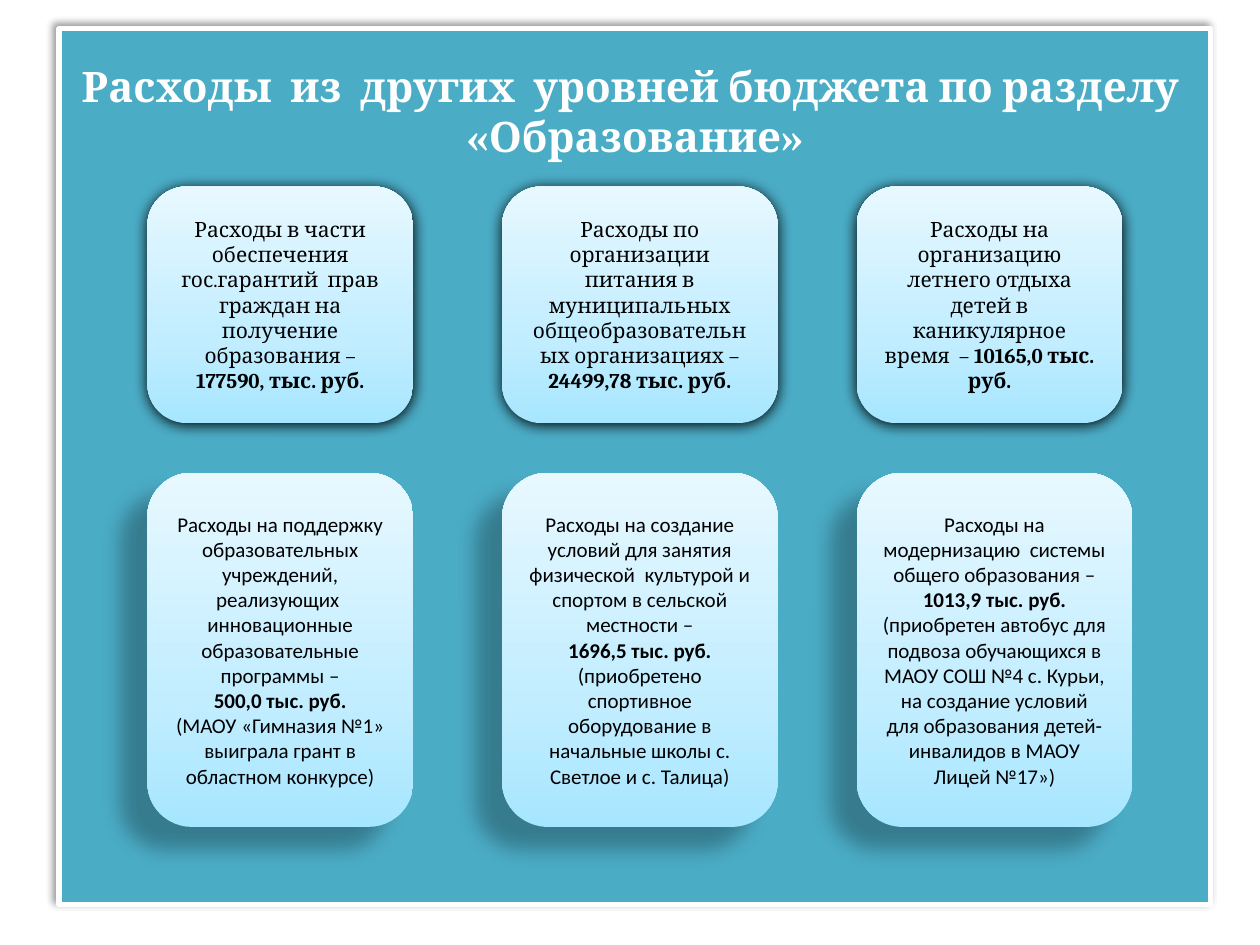
from lxml import etree
from pptx import Presentation
from pptx.dml.color import RGBColor
from pptx.enum.shapes import MSO_SHAPE
from pptx.enum.text import MSO_ANCHOR, MSO_AUTO_SIZE, PP_ALIGN
from pptx.oxml.ns import qn
from pptx.util import Cm, Pt

ROUND = MSO_SHAPE.ROUNDED_RECTANGLE
TOP, MIDDLE = MSO_ANCHOR.TOP, MSO_ANCHOR.MIDDLE
CENTER = PP_ALIGN.CENTER
NO_FIT = MSO_AUTO_SIZE.NONE

THEME = {
    "panel": "4BACC6", "white": "FFFFFF", "ink": "000000",
    "stops": [(0, "A7E6FF"), (35, "C1EDFF"), (100, "E7F8FF")],
    "serif": "Cambria", "sans": "Calibri",
    "title": 24, "body": 12,
}

# Content: one list of paragraphs per card, bold parts between asterisks
TITLE = "Расходы  из  других  уровней бюджета по разделу  «Образование»"
GRANTS = [
    ["Расходы в части обеспечения гос.гарантий  прав граждан на получение образования –",
     "*177590, тыс. руб.*"],
    ["Расходы по организации питания в муниципальных общеобразовательных "
     "организациях – *24499,78 тыс. руб.*"],
    ["Расходы на организацию летнего отдыха детей в каникулярное время  – "
     "*10165,0 тыс. руб.*"],
]
PROJECTS = [
    ["Расходы на поддержку образовательных учреждений,",
     "реализующих  инновационные образовательные программы –",
     "*500,0 тыс. руб.*",
     "(МАОУ «Гимназия №1» выиграла грант в областном конкурсе)"],
    ["Расходы на создание условий для занятия физической  культурой и спортом "
     "в сельской местности –",
     "*1696,5 тыс. руб. *(приобретено спортивное оборудование в начальные школы "
     "с. Светлое и с. Талица)"],
    ["Расходы на модернизацию  системы общего образования – *1013,9 тыс. руб.*",
     "(приобретен автобус для подвоза обучающихся в МАОУ СОШ №4 с. Курьи,",
     "на создание условий для образования детей-инвалидов в МАОУ Лицей №17»)"],
]

# Card grid in cm; shadow is alpha %, blur pt, distance pt, angle
LEFT, STEP = 2.97, 7.15
ROWS = [
    {"cards": GRANTS, "top": 3.76, "high": 4.77, "wide": (5.36, 5.56, 5.36),
     "font": THEME["serif"], "shadow": (100, 8.5, 1, 90)},
    {"cards": PROJECTS, "top": 9.53, "high": 7.14, "wide": (5.36, 5.56, 5.56),
     "font": THEME["sans"], "shadow": (28, 11.8, 19.7, 141)},
]


def color(key):
    return RGBColor.from_string(THEME[key])


def add_node(parent, tag, **attrs):
    node = etree.SubElement(parent, qn(tag))
    for name, value in attrs.items():
        node.set(name, str(value))
    return node


def set_shadow(shape, alpha, blur, dist, angle):
    shape.shadow.inherit = False
    effects = shape._element.spPr.find(qn("a:effectLst"))
    outer = add_node(effects, "a:outerShdw", blurRad=Pt(blur), dist=Pt(dist),
                     dir=angle * 60000, algn="ctr", rotWithShape=0)
    shade = add_node(outer, "a:srgbClr", val=THEME["ink"])
    add_node(shade, "a:alpha", val=alpha * 1000)


def set_gradient(shape):
    shape.fill.gradient()
    grad = shape._element.spPr.find(qn("a:gradFill"))
    for child in list(grad):
        grad.remove(child)
    stops = add_node(grad, "a:gsLst")
    for place, tint in THEME["stops"]:
        stop = add_node(stops, "a:gs", pos=place * 1000)
        add_node(stop, "a:srgbClr", val=tint)
    add_node(grad, "a:lin", ang=270 * 60000, scaled=0)


def set_font(para, name, size, key):
    para.alignment = CENTER
    para.font.name, para.font.size = name, Pt(size)
    para.font.color.rgb = color(key)


def add_card(slide, box, lines, font, shadow):
    card = slide.shapes.add_shape(ROUND, *map(Cm, box))
    set_gradient(card)
    card.line.fill.background()
    set_shadow(card, *shadow)
    frame = card.text_frame
    frame.word_wrap, frame.vertical_anchor = True, MIDDLE
    for i, line in enumerate(lines):
        para = frame.add_paragraph() if i else frame.paragraphs[0]
        set_font(para, font, THEME["body"], "ink")
        for j, part in enumerate(line.split("*")):
            if part:
                run = para.add_run()
                run.text = part
                run.font.bold = j % 2 == 1


def add_title(slide):
    # The title fills the coloured panel behind the cards
    panel = slide.shapes.title
    panel.left, panel.top = Cm(1.19), Cm(0.58)
    panel.width, panel.height = Cm(23.22), Cm(17.65)
    panel.fill.solid()
    panel.fill.fore_color.rgb = color("panel")
    panel.line.color.rgb = color("white")
    panel.line.width = Pt(3)
    set_shadow(panel, 40, 4, 3, 225)
    frame = panel.text_frame
    frame.auto_size, frame.word_wrap = NO_FIT, True
    frame.vertical_anchor, frame.margin_top = TOP, Cm(0.63)
    frame.text = TITLE
    para = frame.paragraphs[0]
    set_font(para, THEME["serif"], THEME["title"], "white")
    para.font.bold = True


def main():
    deck = Presentation()
    deck.slide_width, deck.slide_height = Cm(25.4), Cm(19.05)
    slide = deck.slides.add_slide(deck.slide_layouts[5])
    add_title(slide)
    for row in ROWS:
        for i, (lines, wide) in enumerate(zip(row["cards"], row["wide"])):
            box = (LEFT + i * STEP, row["top"], wide, row["high"])
            add_card(slide, box, lines, row["font"], row["shadow"])
    deck.save("out.pptx")


if __name__ == "__main__":
    main()
